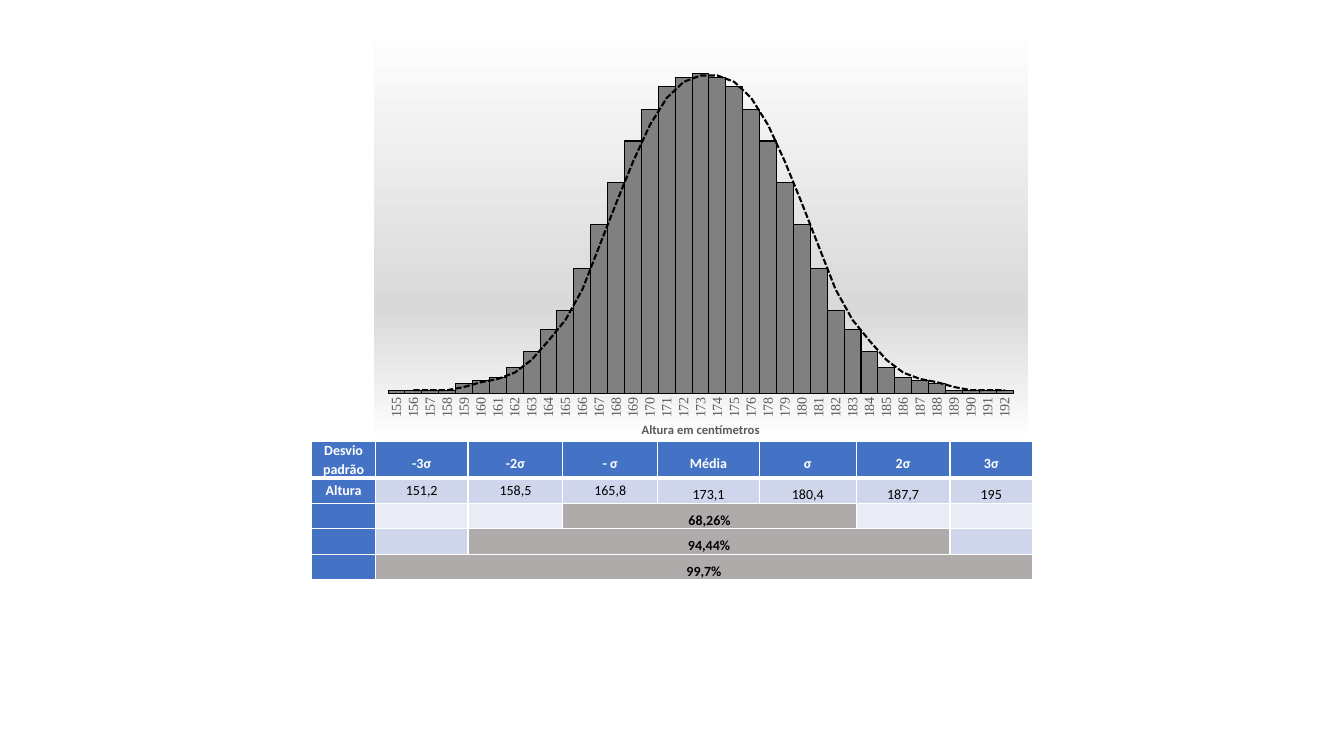
from lxml.etree import SubElement
from pptx import Presentation
from pptx.chart.data import CategoryChartData
from pptx.dml.color import RGBColor
from pptx.enum.chart import XL_CHART_TYPE, XL_TICK_MARK
from pptx.enum.text import MSO_ANCHOR, PP_ALIGN
from pptx.oxml import parse_xml
from pptx.oxml.ns import nsdecls, qn
from pptx.util import Inches, Pt

WHITE = RGBColor(0xFF, 0xFF, 0xFF)
BLACK = RGBColor(0, 0, 0)
BAR_GRAY = RGBColor(0x80, 0x80, 0x80)
LABEL_GRAY = RGBColor(0x59, 0x59, 0x59)
GLOW_GRAY = RGBColor(0xD9, 0xD9, 0xD9)
HEADER_BLUE = RGBColor(0x44, 0x72, 0xC4)
BAND_DARK = RGBColor(0xCF, 0xD5, 0xEA)
BAND_LIGHT = RGBColor(0xE9, 0xEB, 0xF5)
RANGE_GRAY = RGBColor(0xAF, 0xAB, 0xAB)

RISE = [1, 1, 1, 1, 3, 4, 5, 8, 13, 20, 26, 39, 53, 66, 79, 89, 96, 99]
FREQUENCIES = RISE + [100] + RISE[::-1]
HEIGHTS = [str(height) for height in range(155, 193) if height != 177]

DEVIATIONS = ["Desvio padrão", "-3σ", "-2σ", "- σ", "Média", "σ", "2σ", "3σ"]
MEASURES = ["Altura", "151,2", "158,5", "165,8", "173,1", "180,4", "187,7", "195"]
RANGES = [("68,26%", 3, 5), ("94,44%", 2, 6), ("99,7%", 1, 7)]
COLUMN_WIDTHS = [0.63, 0.92, 0.94, 0.94, 1.01, 0.96, 0.93, 0.82]


class DistributionSlide:
    """Holds the style and the slide, and places elements by shares of its size."""

    font_name = "Calibri"
    axis_font = "Times New Roman"
    text_size = Pt(10)

    def __init__(self, deck):
        self.width, self.height = deck.slide_width, deck.slide_height
        self.shapes = deck.slides.add_slide(deck.slide_layouts[6]).shapes

    def frame(self, left, top, width, height):
        """Turn shares of the slide into lengths."""
        return (int(left * self.width), int(top * self.height),
                int(width * self.width), int(height * self.height))

    def style(self, font, color, bold=False, size=None, name=None):
        """Apply the slide's type style to a font."""
        font.name, font.size = name or self.font_name, size or self.text_size
        font.bold, font.color.rgb = bold, color

    def histogram(self, place, heights, frequencies, caption):
        """Add the bar chart with its moving average curve."""
        data = CategoryChartData()
        data.categories = heights
        data.add_series("Series 1", frequencies)
        chart = self.shapes.add_chart(
            XL_CHART_TYPE.COLUMN_CLUSTERED, *self.frame(*place), data).chart
        chart.has_legend = chart.has_title = False
        self.style(chart.font, BLACK)

        plot = chart.plots[0]
        plot.gap_width, plot.vary_by_categories = 0, False
        bars = plot.series[0]
        bars.format.fill.solid()
        bars.format.fill.fore_color.rgb = BAR_GRAY
        bars.format.line.color.rgb = BLACK
        bars.format.line.width = Pt(0.75)

        scale = chart.value_axis
        scale.minimum_scale, scale.maximum_scale = 0, 105
        scale.has_major_gridlines = scale.visible = False

        axis = chart.category_axis
        axis.major_tick_mark = axis.minor_tick_mark = XL_TICK_MARK.NONE
        axis.format.line.fill.background()
        self.style(axis.tick_labels.font, LABEL_GRAY, name=self.axis_font)
        axis._element.txPr.find(qn("a:bodyPr")).set("rot", "-5400000")
        axis.axis_title.text_frame.text = caption
        self.style(axis.axis_title.text_frame.paragraphs[0].font,
                   LABEL_GRAY, bold=True, size=Pt(9))

        self.trend(bars)
        self.backdrop(chart)
        self.plot_area(chart, x=0.022, y=0.081, w=0.955, h=0.804)

    def trend(self, bars):
        """Draw a dashed moving average over the bars."""
        bars._element.find(qn("c:cat")).addprevious(parse_xml(
            f'<c:trendline {nsdecls("c", "a")}><c:spPr><a:ln w="{Pt(1.5)}">'
            f'<a:solidFill><a:srgbClr val="{BLACK}"/></a:solidFill>'
            '<a:prstDash val="sysDash"/></a:ln></c:spPr>'
            '<c:trendlineType val="movingAvg"/><c:period val="2"/>'
            '<c:dispRSqr val="0"/><c:dispEq val="0"/></c:trendline>'))

    def backdrop(self, chart):
        """Fill the chart area with a vertical gradient."""
        stops = "".join(
            f'<a:gs pos="{share * 1000}"><a:srgbClr val="{color}"/></a:gs>'
            for share, color in [(0, WHITE), (68, GLOW_GRAY), (100, WHITE)])
        chart._chartSpace.find(qn("c:chart")).addnext(parse_xml(
            f'<c:spPr {nsdecls("c", "a")}><a:gradFill><a:gsLst>{stops}</a:gsLst>'
            '<a:lin ang="5400000" scaled="0"/></a:gradFill>'
            '<a:ln><a:noFill/></a:ln></c:spPr>'))

    def plot_area(self, chart, **shares):
        """Fix the inner plot area as shares of the chart."""
        area = chart._chartSpace.find(f'{qn("c:chart")}/{qn("c:plotArea")}')
        for automatic in area.findall(qn("c:layout")):
            area.remove(automatic)
        layout = parse_xml(f'<c:layout {nsdecls("c")}><c:manualLayout/></c:layout>')
        settings = {"layoutTarget": "inner", "xMode": "edge", "yMode": "edge", **shares}
        for setting, value in settings.items():
            SubElement(layout[0], qn(f"c:{setting}")).set("val", str(value))
        area.insert(0, layout)

    def cell(self, cell, text, fill, color=BLACK, bold=False, spacing=1.5,
             anchor=MSO_ANCHOR.MIDDLE, rule=1):
        """Fill, border and write one table cell."""
        properties = cell._tc.get_or_add_tcPr()
        for side, width in zip("LRTB", (1, 1, 1, rule)):
            properties.append(parse_xml(
                f'<a:ln{side} {nsdecls("a")} w="{Pt(width)}"><a:solidFill>'
                f'<a:srgbClr val="{WHITE}"/></a:solidFill></a:ln{side}>'))
        cell.fill.solid()
        cell.fill.fore_color.rgb = fill
        cell.vertical_anchor = anchor
        cell.margin_left = cell.margin_right = Inches(0.07)
        cell.margin_top = cell.margin_bottom = 0
        cell.text = text
        paragraph = cell.text_frame.paragraphs[0]
        paragraph.alignment = PP_ALIGN.CENTER
        self.style(paragraph.font, color, bold)
        if text:
            paragraph.line_spacing, paragraph.space_after = spacing, Pt(8)

    def deviation_table(self, place, widths):
        """Add the table of deviations, heights and merged ranges."""
        table = self.shapes.add_table(
            2 + len(RANGES), len(widths), *self.frame(*place)).table
        for column, width in zip(table.columns, widths):
            column.width = Inches(width)
        for index, (deviation, measure) in enumerate(zip(DEVIATIONS, MEASURES)):
            first = index == 0
            self.cell(table.cell(0, index), deviation, HEADER_BLUE, WHITE, True,
                      1.07 if first else 1.5,
                      MSO_ANCHOR.TOP if first else MSO_ANCHOR.MIDDLE, rule=3)
            self.cell(table.cell(1, index), measure,
                      HEADER_BLUE if first else BAND_DARK,
                      WHITE if first else BLACK, first, 1.07 if index < 4 else 1.5)
        for row, (share, start, end) in enumerate(RANGES, 2):
            band = BAND_DARK if row % 2 else BAND_LIGHT
            for index in range(len(widths)):
                covered = start <= index <= end
                fill = RANGE_GRAY if covered else band if index else HEADER_BLUE
                self.cell(table.cell(row, index), share if index == start else "",
                          fill, bold=True)
            table.cell(row, start).merge(table.cell(row, end))


def main():
    deck = Presentation()
    deck.slide_width, deck.slide_height = Inches(13.33), Inches(7.5)
    slide = DistributionSlide(deck)
    slide.histogram((0.278, 0.032, 0.487, 0.552), HEIGHTS, FREQUENCIES,
                    "Altura em centímetros")
    slide.deviation_table((0.232, 0.584, 0.536, 0.167), COLUMN_WIDTHS)
    deck.save("out.pptx")


if __name__ == "__main__":
    main()
